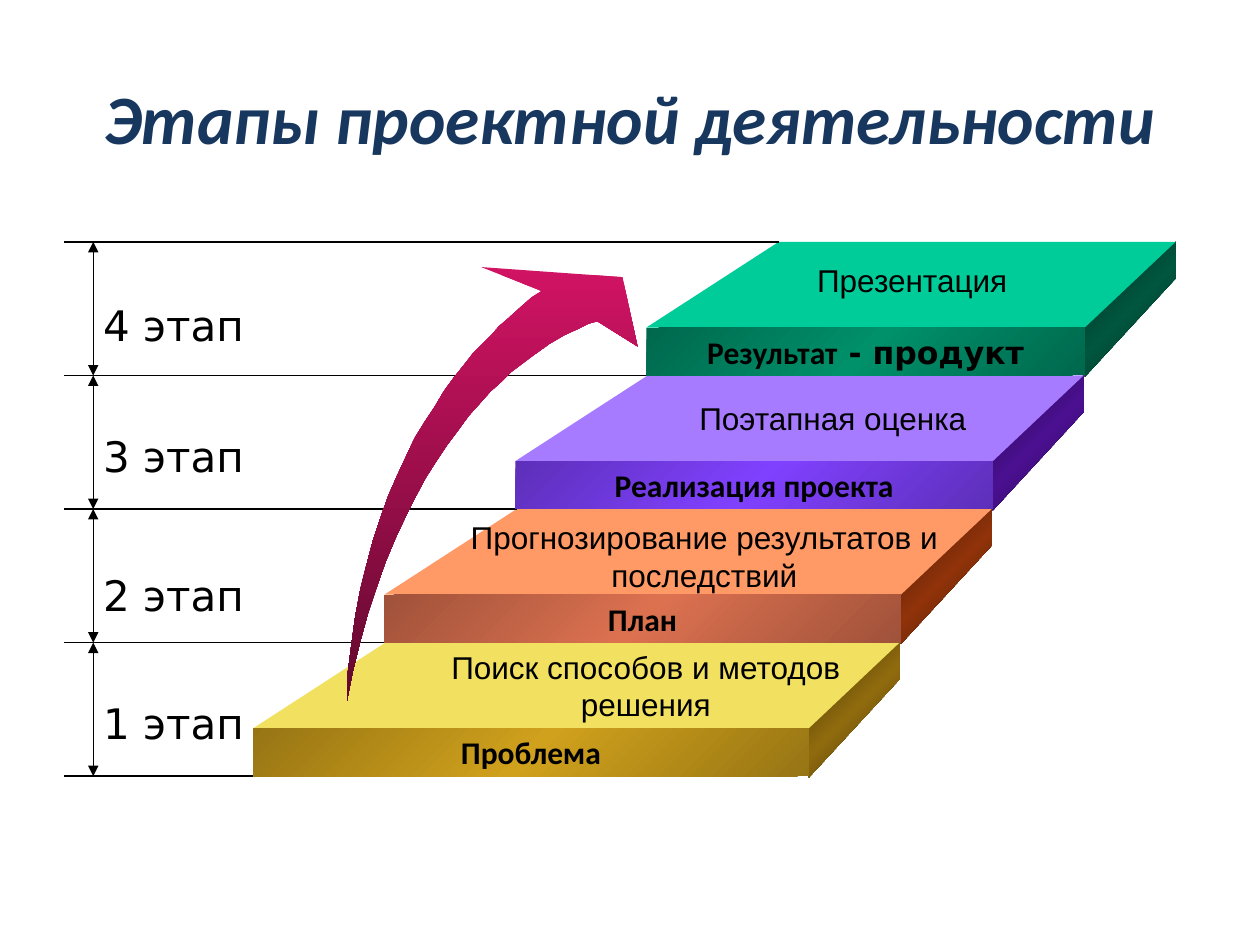
import copy
import pptx
import pptx.util
import pptx.dml.color
import pptx.enum.shapes
import pptx.enum.text
from lxml import etree
from pptx.oxml.ns import qn

Inches = pptx.util.Inches
ALIGN = pptx.enum.text.PP_ALIGN
ANCHOR = pptx.enum.text.MSO_ANCHOR

TITLE = "Этапы проектной деятельности"
BLACK = "000000"
STEPS = [
    dict(name="4 этап", name_y=2.33, top="Презентация", box=(5.47, 2.02, 3.54, 0.4),
         front=[("Результат", "Calibri"), (" - продукт", "DejaVu Sans")],
         face="00CC99", dark=("00684D", "00906A"), side=("00281D", "00563F")),
    dict(name="3 этап", name_y=3.37, top="Поэтапная оценка", box=(4.84, 3.12, 3.54, 0.4),
         front=[("Реализация проекта", "Calibri")],
         face="A77BFF", dark=("5D2FB9", "8041FF"), side=("230744", "4B1092")),
    dict(name="2 этап", name_y=4.47, top="Прогнозирование результатов и последствий",
         box=(3.58, 4.06, 4.02, 0.71), front=[("План", "Calibri")],
         face="FF9966", dark=("A0523A", "DC7150"), side=("431805", "90330A")),
    dict(name="1 этап", name_y=5.49, top="Поиск способов и методов решения",
         box=(3.35, 5.09, 3.55, 0.71), front=[("Проблема", "Calibri")],
         face="F2E160", dark=("977514", "D0A11C"), side=("433206", "906B0E")),
]
ARROW = [
    (2.75, 5.58), (2.76, 5.34), (2.79, 5.11), (2.82, 4.89), (2.86, 4.68), (2.91, 4.48),
    (2.96, 4.29), (3.02, 4.11), (3.08, 3.94), (3.15, 3.78), (3.22, 3.63), (3.29, 3.48),
    (3.37, 3.35), (3.45, 3.23), (3.52, 3.11), (3.6, 3), (3.68, 2.9), (3.75, 2.81),
    (3.83, 2.73), (3.9, 2.66), (3.96, 2.59), (4.03, 2.53), (4.14, 2.43), (4.22, 2.36),
    (4.3, 2.31), (3.82, 2.12), (4.94, 2.2), (5.06, 2.75), (4.74, 2.55), (4.67, 2.57),
    (4.59, 2.61), (4.48, 2.66), (4.36, 2.73), (4.22, 2.83), (4.14, 2.89), (4.06, 2.95),
    (3.98, 3.03), (3.89, 3.11), (3.81, 3.2), (3.72, 3.3), (3.64, 3.41), (3.55, 3.53),
    (3.47, 3.65), (3.38, 3.79), (3.3, 3.94), (3.22, 4.1), (3.14, 4.27), (3.06, 4.46),
    (2.99, 4.66), (2.92, 4.87), (2.86, 5.09), (2.8, 5.33),
]
TOP, PITCH = 1.92, 1.06
LEFT, LEFT_STEP = 5.13, 1.04
RIGHT, RIGHT_STEP = 8.61, 0.73
DEPTH, THICK = 0.68, 0.38
SKEW_L, SKEW_R = 1.05, 0.72
RULE_X, ARROW_X = 0.51, 0.74


def color(code):
    return pptx.dml.color.RGBColor.from_string(code)


def paint(shape, stops, angle=0):
    shape.shadow.inherit = False
    shape.line.fill.background()
    fill = shape.fill
    if len(stops) == 1:
        fill.solid()
        fill.fore_color.rgb = color(stops[0])
        return
    fill.gradient()
    fill.gradient_angle = 360 - angle
    items = shape._element.spPr.find(".//" + qn("a:gsLst"))
    for _ in stops[2:]:
        items.append(copy.deepcopy(items[0]))
    for i, (stop, code) in enumerate(zip(fill.gradient_stops, stops)):
        stop.color.rgb = color(code)
        stop.position = i / (len(stops) - 1)


def outline(slide, points, stops, angle=0):
    start, *rest = [(Inches(x), Inches(y)) for x, y in points]
    build = slide.shapes.build_freeform(*start)
    build.add_line_segments(rest, close=True)
    paint(build.convert_to_shape(), stops, angle)


def write(shape, runs, size, wrap=True, align=ALIGN.CENTER, anchor=ANCHOR.TOP,
          bold=False, italic=False, ink=BLACK):
    frame = shape.text_frame
    frame.word_wrap = wrap
    frame.vertical_anchor = anchor
    para = frame.paragraphs[0]
    para.alignment = align
    for text, face in runs:
        run = para.add_run()
        run.text = text
        font = run.font
        font.name, font.size = face, pptx.util.Pt(size)
        font.bold, font.italic = bold, italic
        font.color.rgb = color(ink)


def text_box(slide, box, *args, **style):
    write(slide.shapes.add_textbox(*map(Inches, box)), *args, **style)


def line(slide, x1, y1, x2, y2, heads=False):
    kind = pptx.enum.shapes.MSO_CONNECTOR.STRAIGHT
    link = slide.shapes.add_connector(kind, *map(Inches, (x1, y1, x2, y2)))
    link.line.color.rgb = color(BLACK)
    link.line.width = pptx.util.Pt(0.75)
    props = link._element.spPr
    if heads:
        for tag in ("a:headEnd", "a:tailEnd"):
            etree.SubElement(props.find(qn("a:ln")), qn(tag), type="triangle")
    etree.SubElement(props, qn("a:effectLst"))


def main():
    deck = pptx.Presentation()
    deck.slide_width, deck.slide_height = Inches(10), Inches(7.5)
    slide = deck.slides.add_slide(deck.slide_layouts[6])
    text_box(slide, (0.5, 0.3, 9, 1.25), [(TITLE, "Calibri")], 39.6,
             anchor=ANCHOR.MIDDLE, bold=True, italic=True, ink="17375E")

    spots = [(TOP + PITCH * i, LEFT - LEFT_STEP * i, RIGHT - RIGHT_STEP * i)
             for i in range(len(STEPS))]
    for step, (y, left, right) in zip(STEPS, spots):
        edge, low, back = y + DEPTH, y + PITCH, right + SKEW_R
        rim, core = step["side"]
        outline(slide, [(back, y), (back, y + 0.29), (right, low + 0.01), (right, edge)],
                (rim, core, rim), 45)
        outline(slide, [(left, edge), (left + SKEW_L, y), (back, y), (right, edge)],
                (step["face"],))

    for y, left, right in spots:
        line(slide, left + SKEW_L, y, RULE_X, y)
        line(slide, ARROW_X, y, ARROW_X, y + PITCH, heads=True)
    end = TOP + PITCH * len(STEPS)
    line(slide, spots[-1][1], end, RULE_X, end)

    outline(slide, ARROW, ("D11364", "61092E"), 90)

    for step, (y, left, right) in zip(STEPS, spots):
        box = (left, y + DEPTH, right - left, THICK)
        front = slide.shapes.add_shape(
            pptx.enum.shapes.MSO_SHAPE.RECTANGLE, *map(Inches, box))
        rim, core = step["dark"]
        paint(front, (rim, core, rim), 45)
        write(front, step["front"], 18, wrap=False, anchor=ANCHOR.MIDDLE, bold=True)
        text_box(slide, (0.72, step["name_y"], 1.41, 0.51),
                 [(step["name"], "DejaVu Sans")], 24, wrap=False, align=ALIGN.LEFT)
        text_box(slide, step["box"], [(step["top"], "Arial")], 18)

    deck.save("out.pptx")


if __name__ == "__main__":
    main()
